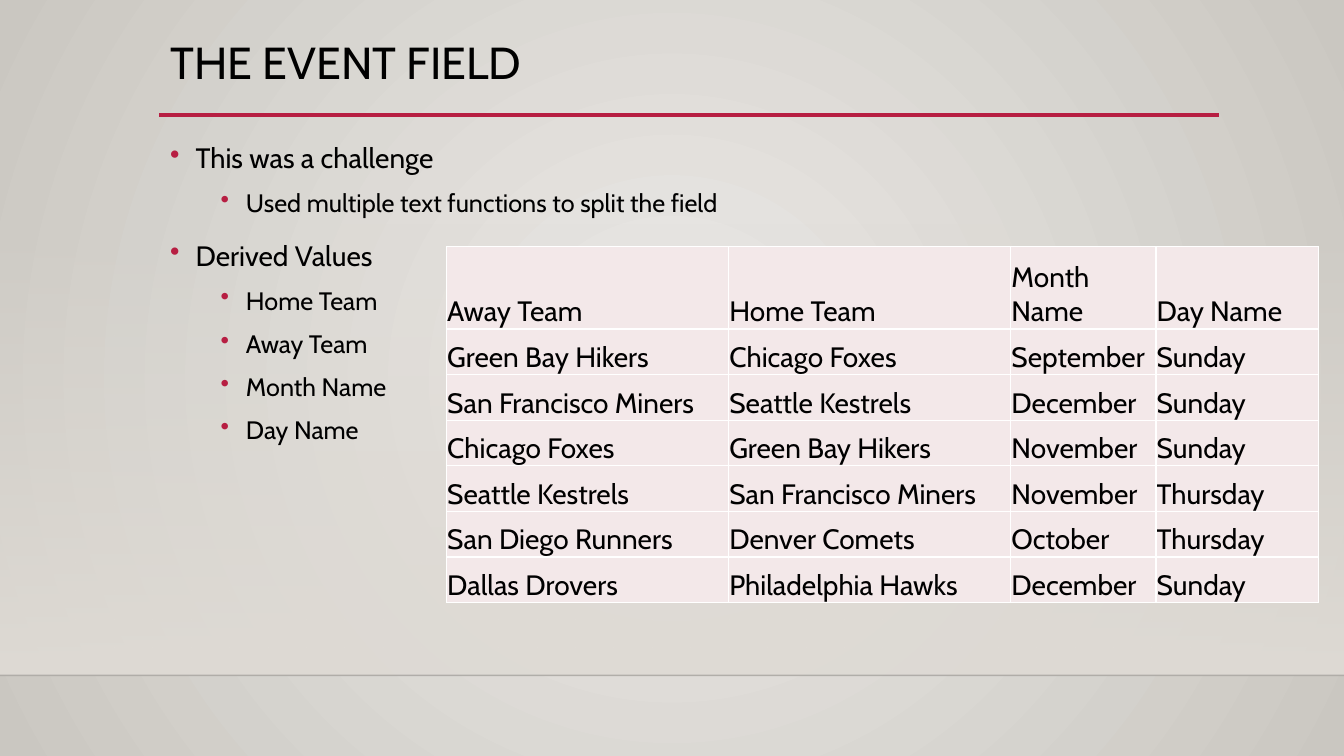
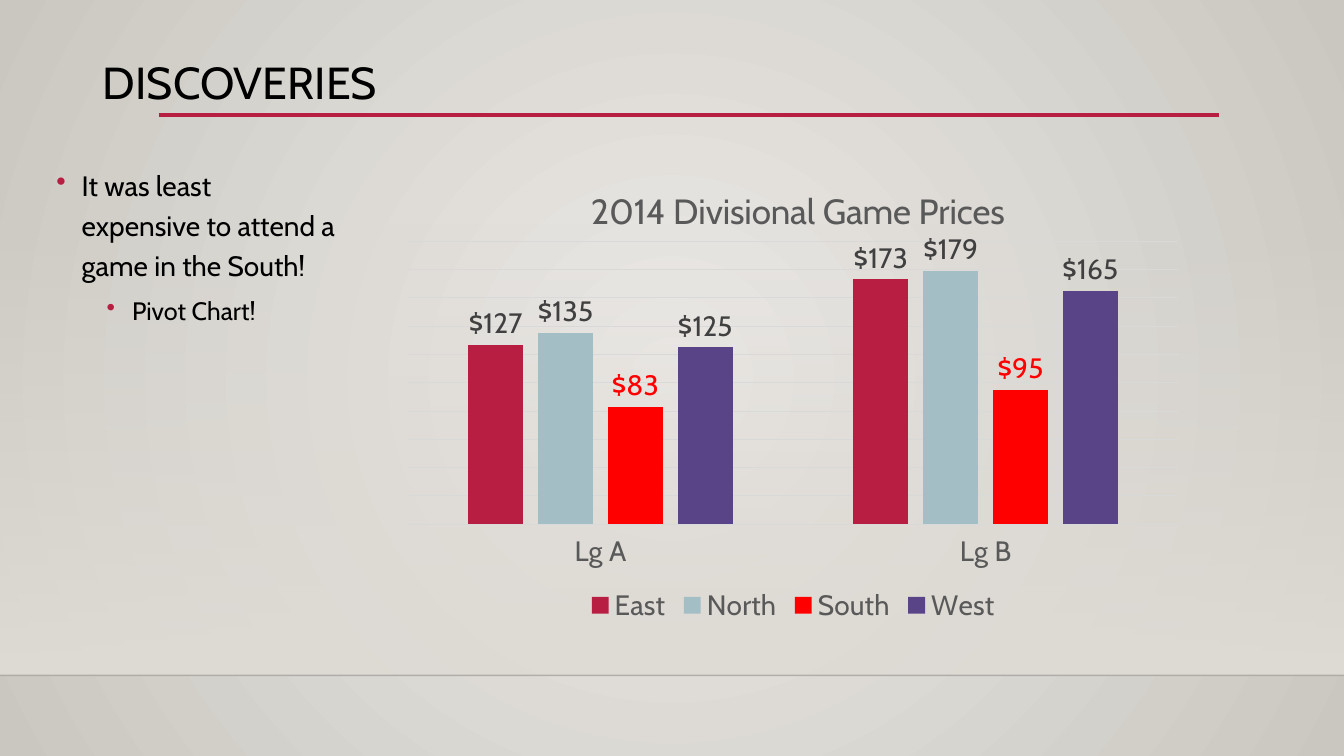
"""Build two slides on ticket data: the event field table and the price chart."""
from dataclasses import dataclass

from pptx import Presentation
from pptx.chart.data import CategoryChartData as ChartData
from pptx.dml.color import RGBColor as RGB
from pptx.enum.chart import XL_CHART_TYPE as Kind
from pptx.enum.chart import XL_LABEL_POSITION as Spot
from pptx.enum.chart import XL_LEGEND_POSITION as Side
from pptx.enum.chart import XL_TICK_LABEL_POSITION as Tag
from pptx.enum.chart import XL_TICK_MARK as Tick
from pptx.enum.shapes import MSO_CONNECTOR as Link
from pptx.enum.shapes import MSO_SHAPE as Form
from pptx.enum.text import MSO_ANCHOR as Anchor
from pptx.enum.text import MSO_AUTO_SIZE as Fit
from pptx.enum.text import PP_ALIGN as Align
from pptx.oxml import parse_xml
from pptx.oxml.ns import nsdecls, qn
from pptx.util import Cm, Pt


@dataclass(frozen=True)
class Theme:
    face: str = "Cabin"
    ink: str = "000000"
    red: str = "B71E42"
    glow: str = "ECEAE7"
    edge: str = "CAC7C1"
    sand: str = "DFDBD5"
    cell: str = "F3E8E9"
    white: str = "FFFFFF"
    gray: str = "595959"
    dark: str = "404040"
    rule: str = "D9D9D9"
    blue: str = "A4BEC6"
    hot: str = "FF0000"
    plum: str = "594487"
    title: int = 32
    head: int = 25
    text: int = 20
    sub: int = 18


look = Theme()


def style(font, size, color=look.ink):
    font.name = look.face
    font.size = Pt(size)
    font.bold = False
    font.color.rgb = RGB.from_string(color)


def blend(root, first, last, alpha, way):
    old = next(root.iter(qn("a:solidFill")))
    new = parse_xml(
        f'<a:gradFill {nsdecls("a")} rotWithShape="1"><a:gsLst>'
        f'<a:gs pos="0"><a:srgbClr val="{first}"><a:alpha val="{alpha}"/></a:srgbClr></a:gs>'
        f'<a:gs pos="100000"><a:srgbClr val="{last}"/></a:gs>'
        f'</a:gsLst>{way}</a:gradFill>')
    old.getparent().replace(old, new)


prs = Presentation()
prs.slide_width, prs.slide_height = Cm(33.87), Cm(19.05)
base = prs.slide_layouts[5]

decks = [
    ("THE EVENT FIELD", (4.04, 0.91, 26.67, 1.63), (4.04, 3.25, 26.67, 11.94), [
        (0, "This was a challenge"),
        (1, "Used multiple text functions to split the field"),
        (0, "Derived Values"),
        (1, "Home Team"),
        (1, "Away Team"),
        (1, "Month Name"),
        (1, "Day Name")]),
    ("DISCOVERIES", (2.34, 1.4, 29.21, 3.68), (1.17, 3.94, 7.55, 12.09), [
        (0, "It was least expensive to attend a game in the South!"),
        (1, "Pivot Chart!")]),
]
levels = [(0.64, look.text, 10), (1.91, look.sub, 5)]
pages = []
for name, top, area, lines in decks:
    page = prs.slides.add_slide(base)
    pages.append(page)

    title = page.shapes.title
    title.left, title.top, title.width, title.height = map(Cm, top)
    frame = title.text_frame
    frame.text = name
    frame.auto_size = Fit.NONE
    frame.word_wrap = True
    frame.vertical_anchor = Anchor.TOP
    para = frame.paragraphs[0]
    para.alignment = Align.LEFT
    para.line_spacing = 0.9
    style(para.runs[0].font, look.title)

    frame = page.shapes.add_textbox(*map(Cm, area)).text_frame
    frame.word_wrap = True
    for num, (level, text) in enumerate(lines):
        para = frame.add_paragraph() if num else frame.paragraphs[0]
        para.text = text
        para.level = level
        left, size, space = levels[level]
        props = para._p.get_or_add_pPr()
        props.set("marL", str(Cm(left)))
        props.set("indent", str(-Cm(0.64)))
        props.append(parse_xml(
            f'<a:buClr {nsdecls("a")}><a:srgbClr val="{look.red}"/></a:buClr>'))
        props.append(parse_xml(f'<a:buChar {nsdecls("a")} char="•"/>'))
        para.line_spacing = 1.2
        para.space_before = Pt(space if num else 0)
        style(para.runs[0].font, size)

base.background.fill.solid()
base.background.fill.fore_color.rgb = RGB.from_string(look.glow)
blend(next(base.element.iter(qn("p:bgPr"))), look.glow, look.edge, 100000,
      '<a:path path="circle"><a:fillToRect l="50000" t="50000" r="50000" b="50000"/></a:path>')

first, second = (page.shapes for page in pages)
band = first.add_shape(Form.RECTANGLE, 0, Cm(5.61), prs.slide_width, Cm(11.41))
band.shadow.inherit = False
band.line.fill.background()
band.fill.solid()
band.fill.fore_color.rgb = RGB.from_string(look.sand)
blend(band.element.spPr, look.sand, look.sand, 0, '<a:lin ang="5400000" scaled="0"/>')

parts = [band]
for left, right, y, color, width, alpha in [
        (0, 33.87, 17.02, look.ink, 1, 20000),
        (4.01, 30.71, 2.9, look.red, 2.5, 100000)]:
    line = first.add_connector(Link.STRAIGHT, Cm(left), Cm(y), Cm(right), Cm(y))
    line.line.color.rgb = RGB.from_string(color)
    line.line.width = Pt(width)
    props = line.element.spPr
    tint = next(props.iter(qn("a:srgbClr")))
    tint.append(parse_xml(f'<a:alpha {nsdecls("a")} val="{alpha}"/>'))
    props.append(parse_xml(f'<a:effectLst {nsdecls("a")}/>'))
    parts.append(line)

for num, part in enumerate(parts):
    next(part.element.iter(qn("p:cNvPr"))).set("id", str(20 + num))
    base.shapes.element.insert(2 + num, part.element)

rows = [
    ("Away Team", "Home Team", "Month Name", "Day Name"),
    ("Green Bay Hikers", "Chicago Foxes", "September", "Sunday"),
    ("San Francisco Miners", "Seattle Kestrels", "December", "Sunday"),
    ("Chicago Foxes", "Green Bay Hikers", "November", "Sunday"),
    ("Seattle Kestrels", "San Francisco Miners", "November", "Thursday"),
    ("San Diego Runners", "Denver Comets", "October", "Thursday"),
    ("Dallas Drovers", "Philadelphia Hawks", "December", "Sunday"),
]
grid = first.add_table(len(rows), 4, Cm(11.25), Cm(6.22), Cm(21.97), Cm(8.97)).table
grid.first_row = grid.horz_banding = False
for col, width in zip(grid.columns, (7.11, 7.11, 3.66, 4.09)):
    col.width = Cm(width)
for num, row in enumerate(rows):
    grid.rows[num].height = Cm(1.15 if num else 2.07)
    for cell, text in zip(grid.rows[num].cells, row):
        cell.text = text
        cell.vertical_anchor = Anchor.BOTTOM
        cell.margin_left = cell.margin_right = cell.margin_top = Cm(0.02)
        cell.margin_bottom = 0
        style(cell.text_frame.paragraphs[0].runs[0].font, look.text)
        cell.fill.solid()
        cell.fill.fore_color.rgb = RGB.from_string(look.cell)
        props = cell._tc.get_or_add_tcPr()
        for spot, side in enumerate("LRTB"):
            props.insert(spot, parse_xml(
                f'<a:ln{side} {nsdecls("a")} w="{Pt(1)}"><a:solidFill>'
                f'<a:srgbClr val="{look.white}"/></a:solidFill></a:ln{side}>'))

data = ChartData()
data.categories = ["Lg A", "Lg B"]
sets = [
    ("East", (127, 173), look.red, look.dark),
    ("North", (135, 179), look.blue, look.dark),
    ("South", (83, 95), look.hot, look.hot),
    ("West", (125, 165), look.plum, look.dark),
]
for name, vals, *tints in sets:
    data.add_series(name, vals)
chart = second.add_chart(Kind.COLUMN_CLUSTERED, Cm(9.88), Cm(3.94),
                         Cm(20.22), Cm(11.89), data).chart
style(chart.font, 10)
chart.has_title = True
frame = chart.chart_title.text_frame
frame.text = "2014 Divisional Game Prices"
style(frame.paragraphs[0].runs[0].font, look.head, look.gray)
chart.has_legend = True
chart.legend.position = Side.BOTTOM
chart.legend.include_in_layout = False
style(chart.legend.font, look.text, look.gray)

plot = chart.plots[0]
plot.vary_by_categories = False
plot.gap_width = 219
plot.overlap = -27
for ser, (name, vals, color, ink) in zip(plot.series, sets):
    ser.format.fill.solid()
    ser.format.fill.fore_color.rgb = RGB.from_string(color)
    tags = ser.data_labels
    tags.show_value = True
    tags.position = Spot.OUTSIDE_END
    tags.number_format = '"$"#,##0'
    tags.number_format_is_linked = False
    style(tags.font, look.text, ink)

cat, val = chart.category_axis, chart.value_axis
cat.major_tick_mark = Tick.NONE
cat.tick_label_position = Tag.LOW
style(cat.tick_labels.font, look.text, look.gray)
val.visible = False
val.minimum_scale, val.maximum_scale, val.major_unit = 0, 200, 20
val.has_major_gridlines = True
for item in (cat, val.major_gridlines):
    item.format.line.color.rgb = RGB.from_string(look.rule)
    item.format.line.width = Pt(0.75)

for tag, spot, inner, sizes in [
        ("c:title", 1, "", {"x": 0.24, "y": 0.05}),
        ("c:plotArea", 0, '<c:layoutTarget val="inner"/>',
         {"x": 0.02, "y": 0.18, "w": 0.96, "h": 0.6})]:
    root = next(chart.element.iter(qn(tag)))
    for old in root.findall(qn("c:layout")):
        root.remove(old)
    modes = "".join(f'<c:{key}Mode val="edge"/>' for key in "xy")
    nums = "".join(f'<c:{key} val="{num}"/>' for key, num in sizes.items())
    root.insert(spot, parse_xml(
        f'<c:layout {nsdecls("c")}><c:manualLayout>{inner}{modes}{nums}'
        f'</c:manualLayout></c:layout>'))

prs.save("out.pptx")
